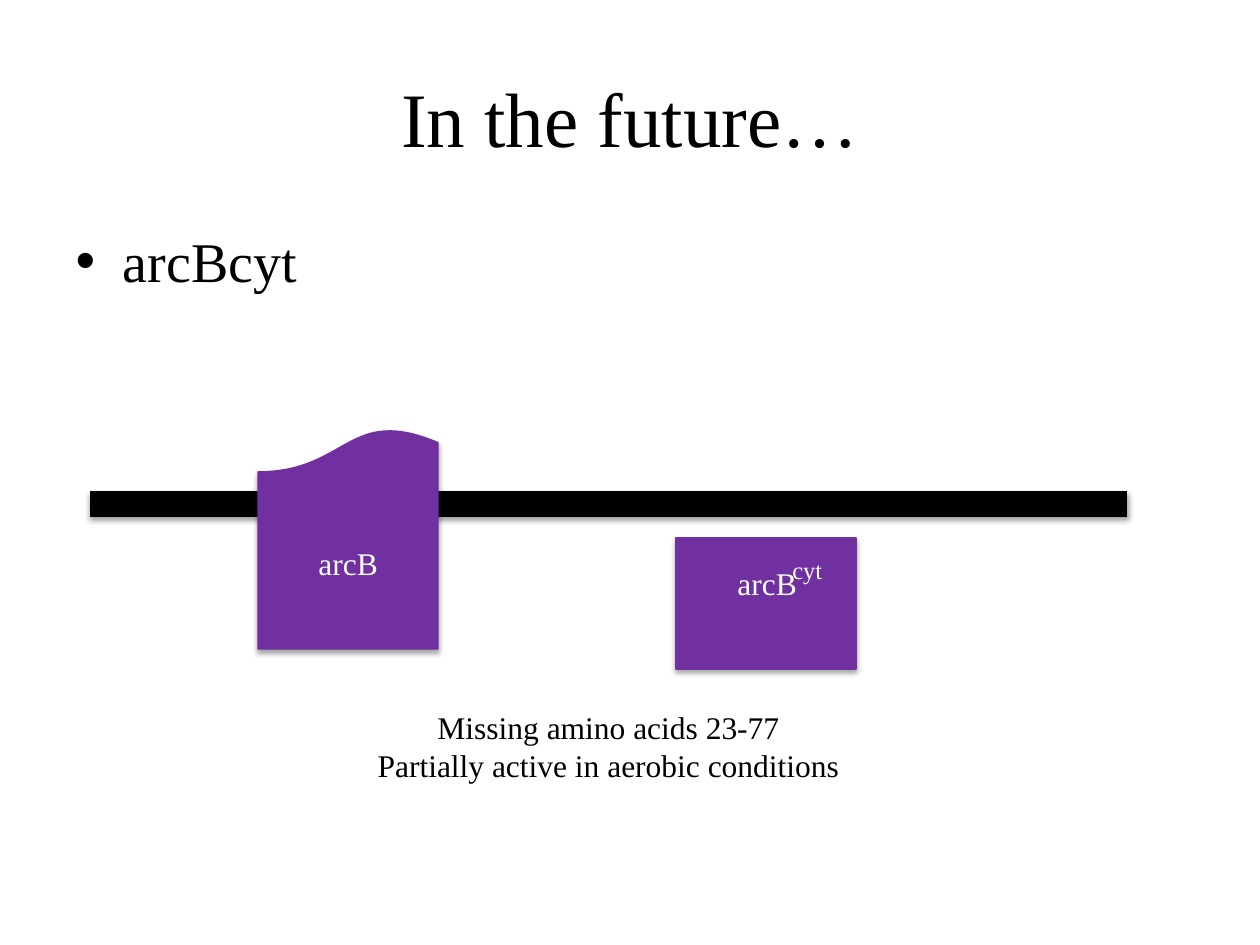
import pptx
import pptx.dml.color
import pptx.enum.shapes
import pptx.enum.text
import pptx.oxml.ns
import pptx.util
import lxml.etree

TITLE = ("In the future…", (63, 38, 1134, 157))
BULLET = ("arcBcyt", (63, 220, 1134, 624))
MEMBRANE = (90, 1127, 504)
PROTEINS = [
    ("FLOWCHART_DOCUMENT", (258, 428, 180, 221), 180),
    ("RECTANGLE", (676, 538, 180, 131), 0),
]
LABELS = [
    (["arcB"], (306, 538, 106, 51), 18, "white", "LEFT"),
    (["arcB"], (725, 558, 93, 51), 18, "white", "LEFT"),
    (["cyt"], (780, 549, 76, 43), 14, "white", "LEFT"),
    (["Missing amino acids 23-77", "Partially active in aerobic conditions"],
     (333, 702, 551, 89), 18, "black", "CENTER"),
]
COLORS = {"black": "000000", "white": "FFFFFF", "purple": "7030A0"}
FONT = "Times New Roman"
PX = 914400 // 126


def emu(lengths):
    return [pptx.util.Emu(length * PX) for length in lengths]


def rgb(name):
    return pptx.dml.color.RGBColor.from_string(COLORS[name])


def style(paragraph, size, color):
    paragraph.font.name = FONT
    paragraph.font.size = pptx.util.Pt(size)
    paragraph.font.color.rgb = rgb(color)


def fill_placeholder(placeholder, text, box, size):
    placeholder.left, placeholder.top, placeholder.width, placeholder.height = emu(box)
    placeholder.text_frame.text = text
    style(placeholder.text_frame.paragraphs[0], size, "black")


def add_shadow(shape, distance, opacity):
    properties = shape._element.spPr
    tag = pptx.oxml.ns.qn
    effects = lxml.etree.SubElement(properties, tag("a:effectLst"))
    shadow = lxml.etree.SubElement(
        effects, tag("a:outerShdw"), blurRad=str(pptx.util.Pt(3.1)),
        dist=str(pptx.util.Pt(distance)), dir="5400000", rotWithShape="0")
    color = lxml.etree.SubElement(shadow, tag("a:srgbClr"), val=COLORS["black"])
    lxml.etree.SubElement(color, tag("a:alpha"), val=str(opacity * 1000))


def main():
    deck = pptx.Presentation()
    deck.slide_width, deck.slide_height = emu((1260, 945))
    slide = deck.slides.add_slide(deck.slide_layouts.get_by_name("Title and Content"))
    fill_placeholder(slide.shapes.title, *TITLE, 44)
    fill_placeholder(slide.placeholders[1], *BULLET, 32)

    left, right, level = MEMBRANE
    membrane = slide.shapes.add_connector(
        pptx.enum.shapes.MSO_CONNECTOR.STRAIGHT, *emu((left, level, right, level)))
    membrane.line.color.rgb = rgb("black")
    membrane.line.width = pptx.util.Pt(14.5)
    add_shadow(membrane, 1.6, 38)

    for kind, box, rotation in PROTEINS:
        protein = slide.shapes.add_shape(pptx.enum.shapes.MSO_SHAPE[kind], *emu(box))
        protein.rotation = rotation
        protein.fill.solid()
        protein.fill.fore_color.rgb = rgb("purple")
        protein.line.color.rgb = rgb("purple")
        protein.line.width = pptx.util.Pt(0.75)
        add_shadow(protein, 1.8, 35)

    for lines, box, size, color, alignment in LABELS:
        label = slide.shapes.add_textbox(*emu(box)).text_frame
        label.word_wrap = True
        label.text = "\n".join(lines)
        for paragraph in label.paragraphs:
            style(paragraph, size, color)
            paragraph.alignment = pptx.enum.text.PP_ALIGN[alignment]

    deck.save("out.pptx")


if __name__ == "__main__":
    main()
